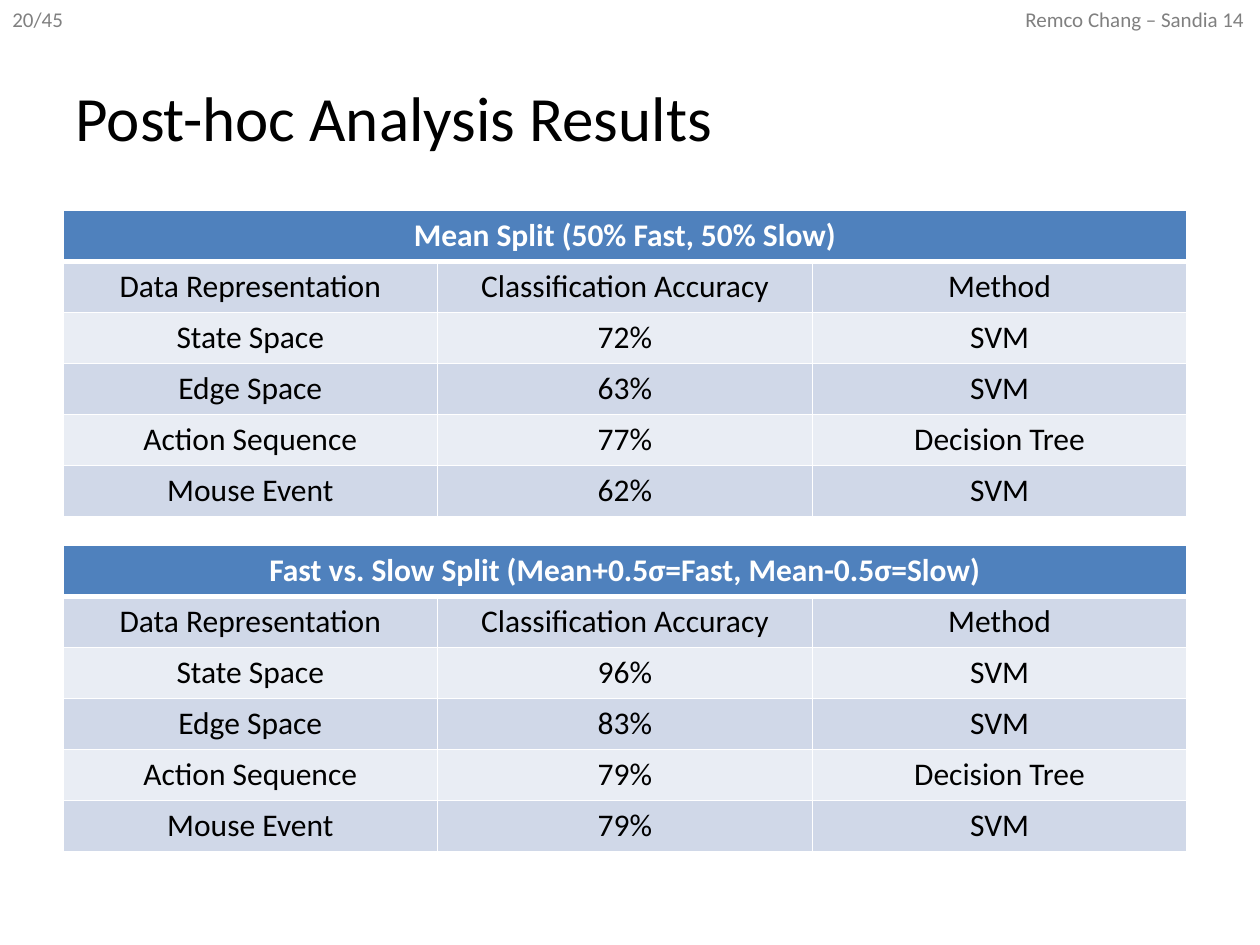
from lxml import etree
from pptx import Presentation
from pptx.dml.color import RGBColor
from pptx.enum import text as t
from pptx.oxml import ns
from pptx.util import Inches, Pt

HEX = {"head": "4F81BD", "dark": "D0D8E8", "light": "E9EDF4",
       "white": "FFFFFF", "black": "000000", "gray": "808080"}
TITLE = "Post-hoc Analysis Results"
NOTES = [("20/45", 0, 0.64), ("Remco Chang – Sandia 14", 8.04, 1.96)]
COLS = ("Data Representation", "Classification Accuracy", "Method")
KINDS = [("State Space", "SVM"), ("Edge Space", "SVM"),
         ("Action Sequence", "Decision Tree"), ("Mouse Event", "SVM")]
TABLES = [
    ("Mean Split (50% Fast, 50% Slow)", 1.67, ("72%", "63%", "77%", "62%")),
    ("Fast vs. Slow Split (Mean+0.5σ=Fast, Mean-0.5σ=Slow)", 4.33,
     ("96%", "83%", "79%", "79%")),
]
LEFT, WIDTH, HEIGHT = 0.5, 8.92, 2.43


def write(frame, words, size=18, color="black", bold=False, align="LEFT"):
    para = frame.paragraphs[0]
    para.alignment = getattr(t.PP_ALIGN, align)
    run = para.add_run()
    run.text = words
    font = run.font
    font.name, font.size, font.bold = "Calibri", Pt(size), bold
    font.color.rgb = RGBColor.from_string(HEX[color])


def paint(cell, fill, top=1, bottom=1):
    """Fill a cell and rule its four sides in white; widths in points."""
    props = cell._tc.get_or_add_tcPr()
    for side, width in (("L", 1), ("R", 1), ("T", top), ("B", bottom)):
        line = etree.SubElement(props, ns.qn("a:ln" + side), w=str(Pt(width)))
        solid = etree.SubElement(line, ns.qn("a:solidFill"))
        etree.SubElement(solid, ns.qn("a:srgbClr"), val=HEX["white"])
    cell.fill.solid()
    cell.fill.fore_color.rgb = RGBColor.from_string(HEX[fill])


def add_results(slide, head, top, scores):
    body = [COLS] + [(kind, score, method)
                     for (kind, method), score in zip(KINDS, scores)]
    rows = [(head, "", "")] + body
    grid = slide.shapes.add_table(
        len(rows), len(COLS), Inches(LEFT), Inches(top),
        Inches(WIDTH), Inches(HEIGHT)).table
    grid.cell(0, 0).merge(grid.cell(0, len(COLS) - 1))
    for r, row in enumerate(rows):
        fill = "head" if r == 0 else "dark" if r % 2 else "light"
        for c, words in enumerate(row):
            cell = grid.cell(r, c)
            paint(cell, fill, top=3 if r == 1 else 1, bottom=3 if r == 0 else 1)
            if words:
                write(cell.text_frame, words, align="CENTER", bold=r == 0,
                      color="black" if r else "white")


def main():
    deck = Presentation()
    deck.slide_width, deck.slide_height = Inches(10), Inches(7.5)
    slide = deck.slides.add_slide(deck.slide_layouts[5])

    for words, left, width in NOTES:
        box = slide.shapes.add_textbox(
            Inches(left), 0, Inches(width), Inches(0.3))
        box.text_frame.word_wrap = False
        write(box.text_frame, words, size=12, color="gray")

    title = slide.shapes.title
    title.left, title.top = Inches(0.5), Inches(0.3)
    title.width, title.height = Inches(9), Inches(1.25)
    title.text_frame.vertical_anchor = t.MSO_ANCHOR.MIDDLE
    write(title.text_frame, TITLE, size=36)

    for head, top, scores in TABLES:
        add_results(slide, head, top, scores)
    deck.save("out.pptx")


if __name__ == "__main__":
    main()
